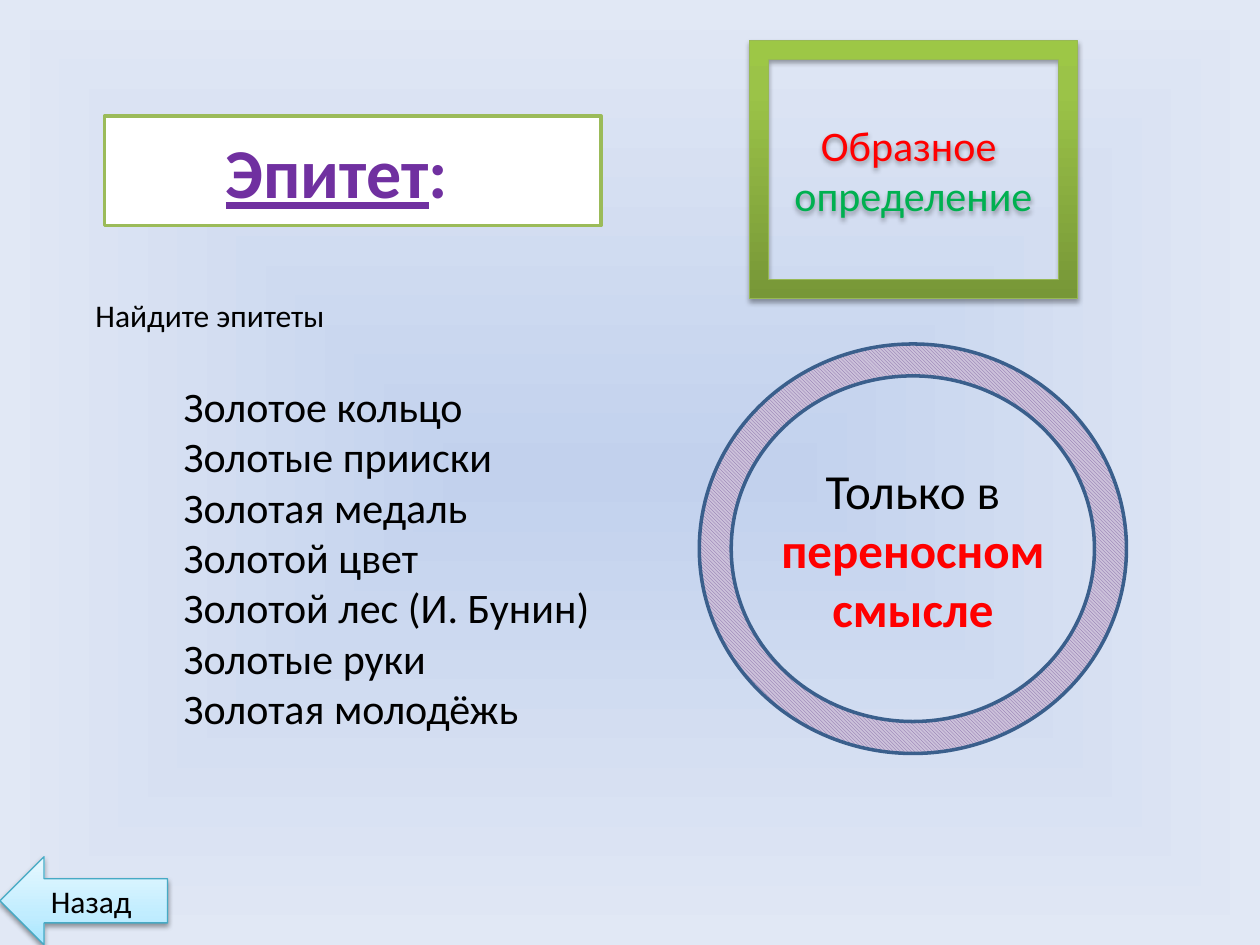
"""Build the slide about the epithet with python-pptx."""
from lxml import etree
from pptx import Presentation
from pptx.dml.color import RGBColor
from pptx.enum.dml import MSO_PATTERN
from pptx.enum.shapes import MSO_SHAPE
from pptx.enum.text import MSO_ANCHOR, MSO_AUTO_SIZE, PP_ALIGN
from pptx.oxml import parse_xml
from pptx.oxml.ns import nsdecls, qn
from pptx.util import Inches, Pt

COLORS = {
    "white": "FFFFFF", "black": "000000", "red": "FF0000", "green": "00B050",
    "purple": "7030A0", "title_line": "9BBB59", "frame_line": "98B955",
    "ring_line": "3A5F8C", "ring_front": "8064A2", "ring_back": "CCC1DA",
    "arrow_line": "46AAC5",
}
PAGE_STOPS = [(0, "C2D1ED"), (100, "E1E8F5")]
FRAME_STOPS = [(0, "779737"), (80, "9BC348"), (100, "9DC746")]
ARROW_STOPS = [(0, "A7E6FF"), (35, "C1EDFF"), (100, "E7F8FF")]
UPWARD = '<a:lin ang="16200000" scaled="0"/>'
FROM_CENTER = ('<a:path path="rect"><a:fillToRect l="50000" t="50000" '
               'r="50000" b="50000"/></a:path>')

TITLE = [[("Эпитет", "purple", "bu"), (":  ", "purple", "b")]]
DEFINITION = [[("Образное ", "red", "")], [("определение", "green", "")]]
MEANING = [[("Только в ", "black", ""), ("переносном смысле", "red", "b")]]
BACK = [[("Назад ", "black", "")]]
TASK = [[("Найдите эпитеты", "black", "")]]
PHRASES = [[(phrase, "black", "")] for phrase in (
    "Золотое кольцо", "Золотые прииски", "Золотая медаль", "Золотой цвет",
    "Золотой лес (И. Бунин)", "Золотые руки", "Золотая молодёжь")]


def color(name):
    return RGBColor.from_string(COLORS[name])


def gradient(stops, direction):
    marks = "".join(f'<a:gs pos="{place * 1000}"><a:srgbClr val="{value}"/></a:gs>'
                    for place, value in stops)
    return parse_xml(f'<a:gradFill {nsdecls("a")} rotWithShape="1">'
                     f'<a:gsLst>{marks}</a:gsLst>{direction}</a:gradFill>')


def set_gradient(fill, parent, stops, direction):
    fill.solid()
    solid = parent.find(qn("a:solidFill"))
    parent.replace(solid, gradient(stops, direction))


def add_shadow(effects, alpha, distance):
    shade = etree.SubElement(effects, qn("a:outerShdw"), blurRad=str(Pt(3.1)),
                             dist=str(Pt(distance)), dir="5400000", rotWithShape="0")
    tone = etree.SubElement(shade, qn("a:srgbClr"), val=COLORS["black"])
    etree.SubElement(tone, qn("a:alpha"), val=str(alpha * 1000))


def write(box, paragraphs, size, align=PP_ALIGN.LEFT, shadow=None):
    for number, spans in enumerate(paragraphs):
        frame = box.text_frame
        paragraph = frame.add_paragraph() if number else frame.paragraphs[0]
        paragraph.alignment = align
        for text, name, style in spans:
            span = paragraph.add_run()
            span.text = text
            span.font.size = Pt(size)
            span.font.name = "Calibri"
            span.font.bold = "b" in style
            span.font.underline = "u" in style
            span.font.color.rgb = color(name)
            if shadow:
                effects = etree.Element(qn("a:effectLst"))
                span.font._element.find(qn("a:solidFill")).addnext(effects)
                add_shadow(effects, *shadow)


def add_figure(page, kind, place, line, width, paragraphs, size,
               adjustment=None, stops=None, shadow=None, text_shadow=None):
    figure = page.shapes.add_shape(kind, *map(Inches, place))
    if adjustment:
        figure.adjustments[0] = adjustment
    properties = figure._element.spPr
    if stops:
        set_gradient(figure.fill, properties, stops, UPWARD)
    figure.line.color.rgb = color(line)
    figure.line.width = Pt(width)
    figure.shadow.inherit = False
    if shadow:
        add_shadow(properties.find(qn("a:effectLst")), *shadow)
    figure.text_frame.word_wrap = True
    figure.text_frame.vertical_anchor = MSO_ANCHOR.MIDDLE
    write(figure, paragraphs, size, PP_ALIGN.CENTER, text_shadow)
    return figure


def add_text(page, place, paragraphs, size, wrap):
    box = page.shapes.add_textbox(*map(Inches, place))
    box.text_frame.word_wrap = wrap
    box.text_frame.auto_size = MSO_AUTO_SIZE.SHAPE_TO_FIT_TEXT
    write(box, paragraphs, size)


def main():
    deck = Presentation()
    deck.slide_width, deck.slide_height = Inches(10), Inches(7.5)
    page = deck.slides.add_slide(deck.slide_layouts[6])
    fill = page.background.fill
    fill.solid()
    set_gradient(fill, page.element.find(".//" + qn("p:bgPr")), PAGE_STOPS, FROM_CENTER)

    title = add_figure(page, MSO_SHAPE.RECTANGLE, (0.83, 0.92, 3.94, 0.87),
                       "title_line", 2, TITLE, 40)
    title.fill.solid()
    title.fill.fore_color.rgb = color("white")

    add_figure(page, MSO_SHAPE.FRAME, (5.95, 0.32, 2.6, 2.05), "frame_line", 0.75,
               DEFINITION, 24, 0.073, FRAME_STOPS, (35, 1.8), (35, 1.8))

    ring = add_figure(page, MSO_SHAPE.DONUT, (5.55, 2.73, 3.39, 3.25),
                      "ring_line", 2, MEANING, 28, 0.078)
    ring.fill.patterned()
    ring.fill.pattern = MSO_PATTERN.LIGHT_DOWNWARD_DIAGONAL
    ring.fill.fore_color.rgb = color("ring_front")
    ring.fill.back_color.rgb = color("ring_back")

    add_text(page, (1.36, 2.97, 3.45, 2.93), PHRASES, 24, False)
    add_figure(page, MSO_SHAPE.LEFT_ARROW, (0, 6.8, 1.33, 0.7), "arrow_line", 0.75,
               BACK, 18, stops=ARROW_STOPS, shadow=(38, 1.6))
    add_text(page, (0.66, 2.3, 4.17, 0.4), TASK, 18, True)
    deck.save("out.pptx")


if __name__ == "__main__":
    main()
